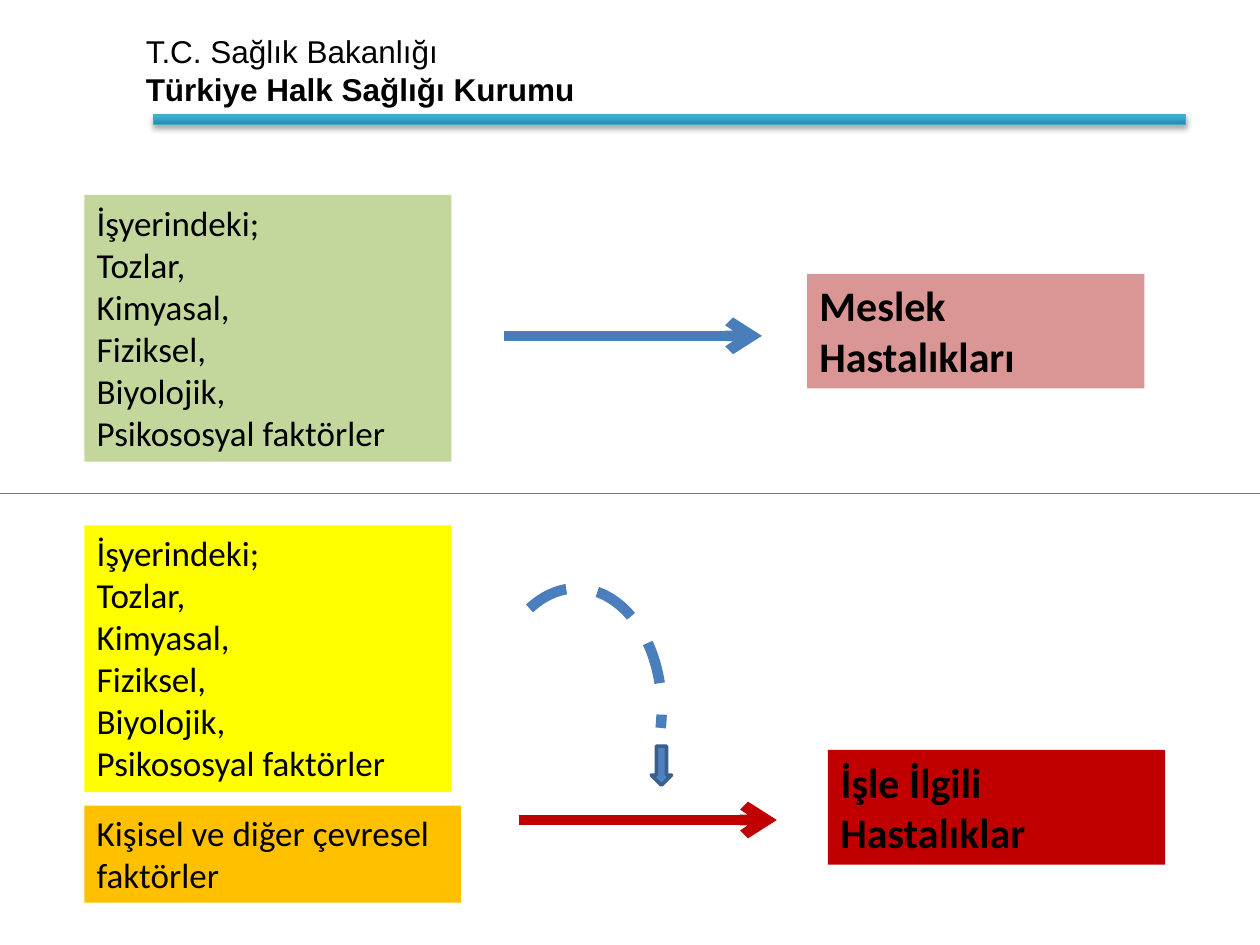
from pptx import Presentation
from pptx.dml.color import RGBColor
from pptx.enum.dml import MSO_LINE
from pptx.enum.shapes import MSO_CONNECTOR, MSO_SHAPE
from pptx.enum.text import MSO_ANCHOR, MSO_AUTO_SIZE, PP_ALIGN
from pptx.oxml import parse_xml
from pptx.oxml.ns import qn
from pptx.util import Cm, Pt
from lxml import etree

RECT, ARC, DOWN_ARROW = MSO_SHAPE.RECTANGLE, MSO_SHAPE.ARC, MSO_SHAPE.DOWN_ARROW
STRAIGHT, DASH = MSO_CONNECTOR.STRAIGHT, MSO_LINE.DASH
LEFT, TOP, GROW = PP_ALIGN.LEFT, MSO_ANCHOR.TOP, MSO_AUTO_SIZE.SHAPE_TO_FIT_TEXT
A = 'xmlns:a="http://schemas.openxmlformats.org/drawingml/2006/main"'

# Content; lengths in centimetres
WIDTH, HEIGHT = 25.4, 19.05
INSTITUTION = [("T.C. Sağlık Bakanlığı", False), ("Türkiye Halk Sağlığı Kurumu", True)]
WORKPLACE_FACTORS = ["İşyerindeki;", "Tozlar,", "Kimyasal,", "Fiziksel,", "Biyolojik,",
                     "Psikososyal faktörler"]
CAUSES = [  # lines, top, width, height, fill
    (WORKPLACE_FACTORS, 3.93, 7.4, 5.38, "C3D69B"),
    (WORKPLACE_FACTORS, 10.59, 7.4, 5.38, "FFFF00"),
    (["Kişisel ve diğer çevresel faktörler"], 16.24, 7.6, 1.96, "FFC000"),
]
DISEASES = [  # lines, left, top, fill
    (["Meslek Hastalıkları"], 16.27, 5.52, "D99694"),
    (["İşle İlgili", "Hastalıklar"], 16.69, 15.12, "C00000"),
]
CAUSE_LEFT, DISEASE_WIDTH, DISEASE_HEIGHT = 1.7, 6.8, 2.31
EFFECT_ARROWS = [(10.16, 6.77, "4A7EBB"), (10.46, 16.53, "C00000")]  # left, y, colour
EFFECT_LENGTH = 5.2
DIVIDER_Y = 9.95
BAR_STOPS = [(0, "2A88A2"), (80, "37B1D2"), (100, "34B4D6")]


def color(hex_string):
    return RGBColor.from_string(hex_string)


def add_shape(kind, left, top, width, height, fill=None, line=None, line_width=0):
    shape = slide.shapes.add_shape(kind, Cm(left), Cm(top), Cm(width), Cm(height))
    shape.shadow.inherit = False
    if fill:
        shape.fill.solid()
        shape.fill.fore_color.rgb = color(fill)
    else:
        shape.fill.background()
    if line:
        shape.line.color.rgb = color(line)
        shape.line.width = Pt(line_width)
    else:
        shape.line.fill.background()
    return shape


def write(frame, lines, size, font):
    frame.word_wrap = True
    frame.auto_size = GROW
    frame.vertical_anchor = TOP
    for number, (text, bold) in enumerate(lines):
        paragraph = frame.paragraphs[0] if number == 0 else frame.add_paragraph()
        paragraph.alignment = LEFT
        run = paragraph.add_run()
        run.text = text
        run.font.name = font
        run.font.size = Pt(size)
        run.font.bold = bold
        run.font.color.rgb = color("000000")


def add_line(left, y, length, line, line_width, arrow=False):
    connector = slide.shapes.add_connector(STRAIGHT, Cm(left), Cm(y), Cm(left + length), Cm(y))
    connector.line.color.rgb = color(line)
    connector.line.width = Pt(line_width)
    properties = connector._element.spPr
    if arrow:
        etree.SubElement(properties.find(qn("a:ln")), qn("a:tailEnd"), type="arrow")
    etree.SubElement(properties, qn("a:effectLst"))


deck = Presentation()
deck.slide_width, deck.slide_height = Cm(WIDTH), Cm(HEIGHT)
slide = deck.slides.add_slide(deck.slide_layouts[6])

# Header: institution name over a shaded bar
institution = slide.shapes.add_textbox(Cm(2.69), Cm(0.53), Cm(17.4), Cm(1.8))
write(institution.text_frame, INSTITUTION, 18, "Arial")

bar = add_shape(RECT, 3.1, 2.31, 20.8, 0.2, line="46AAC5", line_width=0.75)
bar_properties = bar._element.spPr
stops = "".join(f'<a:gs pos="{position * 1000}"><a:srgbClr val="{shade}"/></a:gs>'
                for position, shade in BAR_STOPS)
bar_properties.replace(bar_properties.find(qn("a:noFill")), parse_xml(
    f'<a:gradFill {A}><a:gsLst>{stops}</a:gsLst><a:lin ang="16200000" scaled="0"/></a:gradFill>'))
bar_properties.find(qn("a:effectLst")).append(parse_xml(
    f'<a:outerShdw {A} blurRad="{Pt(3.1)}" dist="{Pt(1.8)}" dir="5400000" rotWithShape="0">'
    '<a:srgbClr val="000000"><a:alpha val="35000"/></a:srgbClr></a:outerShdw>'))

# Causes on the left, diseases on the right
for lines, top, width, height, fill in CAUSES:
    cause = add_shape(RECT, CAUSE_LEFT, top, width, height, fill)
    write(cause.text_frame, [(text, False) for text in lines], 20, "Calibri")
for lines, left, top, fill in DISEASES:
    disease = add_shape(RECT, left, top, DISEASE_WIDTH, DISEASE_HEIGHT, fill)
    write(disease.text_frame, [(text, True) for text in lines], 24, "Calibri")

# Arrows from cause to disease
for left, y, shade in EFFECT_ARROWS:
    add_line(left, y, EFFECT_LENGTH, shade, 6, arrow=True)

# Dashed curve of workplace influence, ending in a down arrow
influence = add_shape(ARC, 9.91, 11.86, 3.43, 4.88, line="4B7EBC", line_width=6)
influence.line.dash_style = DASH
influence.adjustments[0] = 146.99
influence.adjustments[1] = 7.49
add_shape(DOWN_ARROW, 13.13, 15.04, 0.41, 0.79, "4F81BD", "3A5F8C", 2)

# Divider between the two cases
add_line(0, DIVIDER_Y, WIDTH, "4B7EBC", 0.75)

deck.save("out.pptx")
